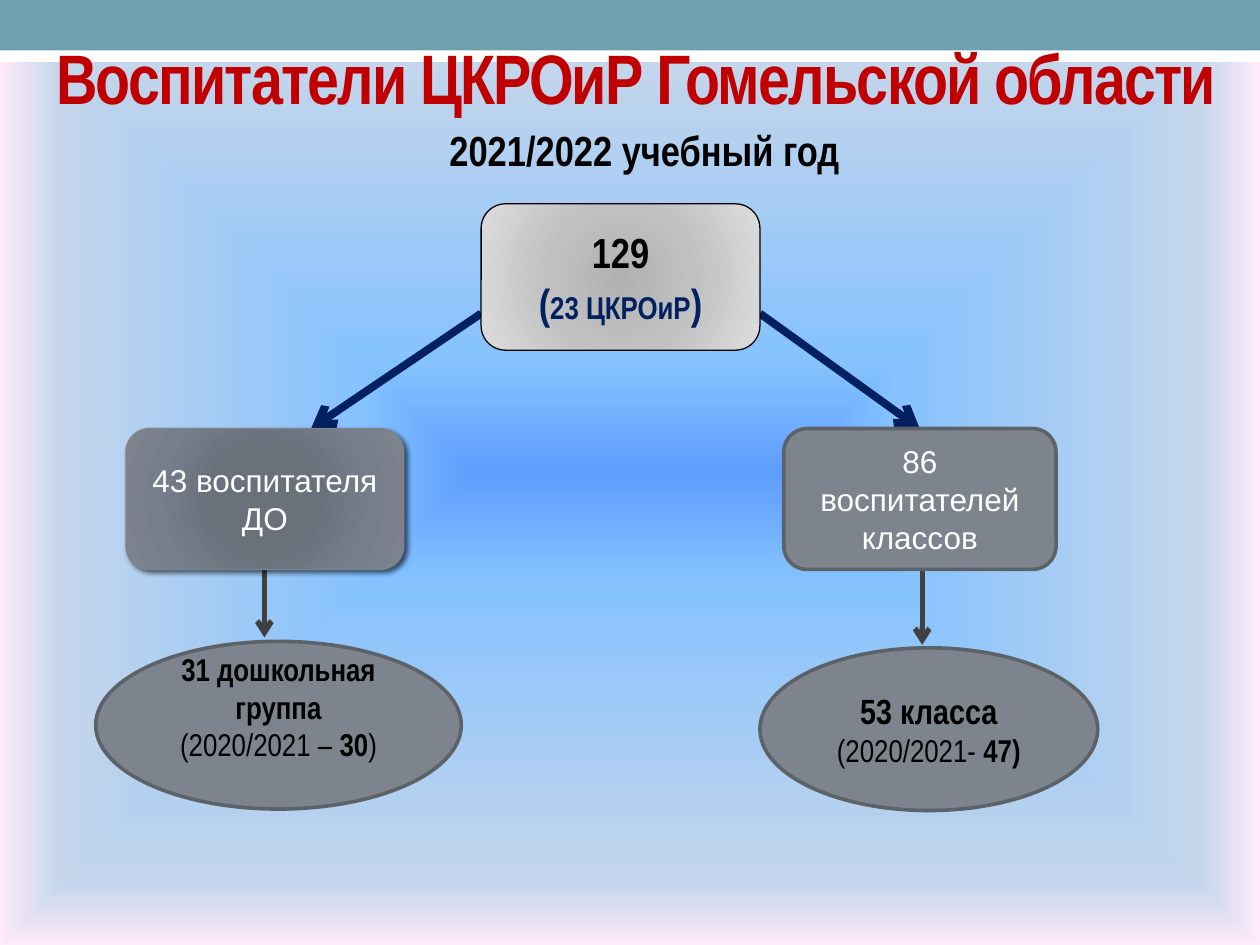
"""Build the slide on educators of the Gomel region centres."""
from lxml import etree
from pptx import Presentation
from pptx.dml.color import RGBColor
from pptx.enum.shapes import MSO_CONNECTOR, MSO_SHAPE
from pptx.enum.text import MSO_ANCHOR, MSO_AUTO_SIZE, PP_ALIGN
from pptx.oxml import parse_xml
from pptx.oxml.ns import nsdecls, qn
from pptx.util import Cm, Pt

RECT, ROUND, OVAL = MSO_SHAPE.RECTANGLE, MSO_SHAPE.ROUNDED_RECTANGLE, MSO_SHAPE.OVAL
STRAIGHT = MSO_CONNECTOR.STRAIGHT
CENTER, LEFT = PP_ALIGN.CENTER, PP_ALIGN.LEFT
MIDDLE = MSO_ANCHOR.MIDDLE

BLACK = RGBColor(0x00, 0x00, 0x00)
WHITE = RGBColor(0xFF, 0xFF, 0xFF)
TEAL = RGBColor(0x6E, 0xA0, 0xB0)
RED = RGBColor(0xC0, 0x00, 0x00)
NAVY = RGBColor(0x00, 0x20, 0x60)
DARK = RGBColor(0x40, 0x40, 0x40)
GRAY = RGBColor(0x7E, 0x84, 0x8D)
EDGE = RGBColor(0x5D, 0x62, 0x68)
NARROW, ARIAL = "Arial Narrow", "Arial"

SKY = [(0, "5E9EFF"), (23, "85C2FF"), (87, "C4D6EB"), (100, "FFEBFA")]
SILVER = [(0, "B1B1B1"), (45, "C0C0C0"), (100, "DDDDDD")]
STEEL = [(0, "69707C"), (34, "69717B"), (70, "757E8A"), (100, "7E848D")]


def set_gradient(fill, owner, stops, kind):
    fill.gradient()
    old = next(owner.iter(qn("a:gradFill")))
    marks = "".join(f'<a:gs pos="{pos * 1000}"><a:srgbClr val="{rgb}"/></a:gs>' for pos, rgb in stops)
    new = parse_xml(
        f'<a:gradFill {nsdecls("a")} rotWithShape="1"><a:gsLst>{marks}</a:gsLst><a:path path="{kind}">'
        '<a:fillToRect l="50000" t="50000" r="50000" b="50000"/></a:path></a:gradFill>')
    old.getparent().replace(old, new)


def write_text(tf, font, lines, align=CENTER):
    for i, line in enumerate(lines):
        p = tf.paragraphs[0] if i == 0 else tf.add_paragraph()
        p.alignment = align
        for text, size, bold, color in line:
            r = p.add_run()
            r.text = text
            r.font.name, r.font.size, r.font.bold = font, Pt(size), bold
            r.font.color.rgb = color


prs = Presentation()
prs.slide_width, prs.slide_height = Cm(25.4), Cm(19.05)
s = prs.slides.add_slide(prs.slide_layouts[5])
set_gradient(s.background.fill, s.background._cSld, SKY, "shape")

for top, height, color in [(0.61, 0.64, WHITE), (0, 1.02, TEAL)]:
    sp = s.shapes.add_shape(RECT, 0, Cm(top), prs.slide_width, Cm(height))
    sp.shadow.inherit = False
    sp.fill.solid()
    sp.fill.fore_color.rgb = color
    sp.line.fill.background()

title = s.shapes.title
title.left, title.top, title.width, title.height = Cm(0.6), Cm(0.53), Cm(24.45), Cm(2.03)
tf = title.text_frame
tf.auto_size, tf.vertical_anchor = MSO_AUTO_SIZE.NONE, MIDDLE
write_text(tf, NARROW, [[("Воспитатели ЦКРОиР Гомельской области", 40, True, RED)]])
tf.paragraphs[0].runs[0].font._element.set("spc", "-100")
s.shapes._spTree.append(title._element)

arrows = [
    (9.7, 6.32, 6.27, 8.64, NAVY, 4.5),
    (15.32, 6.32, 18.54, 8.64, NAVY, 4.5),
    (5.33, 11.48, 5.33, 12.85, DARK, 3),
    (18.59, 11.48, 18.59, 13, DARK, 3),
]
for x1, y1, x2, y2, color, width in arrows:
    cn = s.shapes.add_connector(STRAIGHT, Cm(x1), Cm(y1), Cm(x2), Cm(y2))
    cn.line.color.rgb = color
    cn.line.width = Pt(width)
    etree.SubElement(cn.line._get_or_add_ln(), qn("a:tailEnd"), type="arrow")
    etree.SubElement(cn._element.spPr, qn("a:effectLst"))

nodes = [
    (ROUND, 9.7, 4.11, 5.62, 2.95, SILVER, BLACK, 0.75, NARROW,
     [[("129", 24, True, BLACK)],
      [("(", 24, True, NAVY), ("23 ЦКРОиР", 18, True, NAVY), (")", 24, True, NAVY)]]),
    (ROUND, 2.54, 8.64, 5.6, 2.84, STEEL, GRAY, 0.75, ARIAL,
     [[("43 воспитателя ДО", 18, False, WHITE)]]),
    (ROUND, 15.8, 8.64, 5.49, 2.84, None, EDGE, 2.08, ARIAL,
     [[("86 воспитателей классов", 18, False, WHITE)]]),
    (OVAL, 1.93, 12.93, 7.37, 3.38, None, EDGE, 2.08, NARROW,
     [[("31 дошкольная группа", 18, True, BLACK)],
      [("(2020/2021 – ", 18, False, BLACK), ("30", 18, True, BLACK), (")", 18, False, BLACK)]]),
    (OVAL, 15.32, 13.06, 6.81, 3.28, None, EDGE, 2.08, NARROW,
     [[("53 класса", 20, True, BLACK)],
      [("(2020/2021- ", 18, False, BLACK), ("47)", 18, True, BLACK)]]),
]
boxes = []
for shape, x, y, w, h, stops, edge, width, font, lines in nodes:
    sp = s.shapes.add_shape(shape, Cm(x), Cm(y), Cm(w), Cm(h))
    sp.shadow.inherit = False
    if stops:
        set_gradient(sp.fill, sp._element.spPr, stops, "circle")
    else:
        sp.fill.solid()
        sp.fill.fore_color.rgb = GRAY
    sp.line.color.rgb = edge
    sp.line.width = Pt(width)
    sp.text_frame.word_wrap = True
    sp.text_frame.vertical_anchor = MIDDLE
    write_text(sp.text_frame, font, lines)
    boxes.append(sp)

total, preschool, school, groups, classes = boxes
groups.text_frame.margin_bottom = Cm(0.88)
effects = preschool._element.spPr.find(qn("a:effectLst"))
effects.append(parse_xml(
    f'<a:outerShdw {nsdecls("a")} blurRad="{Pt(3)}" dist="{Pt(2)}" dir="2700000" algn="tl" rotWithShape="0">'
    '<a:srgbClr val="000000"><a:alpha val="60000"/></a:srgbClr></a:outerShdw>'))

tb = s.shapes.add_textbox(Cm(8.81), Cm(2.39), Cm(8.51), Cm(1.27))
tb.text_frame.word_wrap = False
write_text(tb.text_frame, NARROW, [[("2021/2022 учебный год", 24, True, BLACK)]], LEFT)

prs.save("out.pptx")
